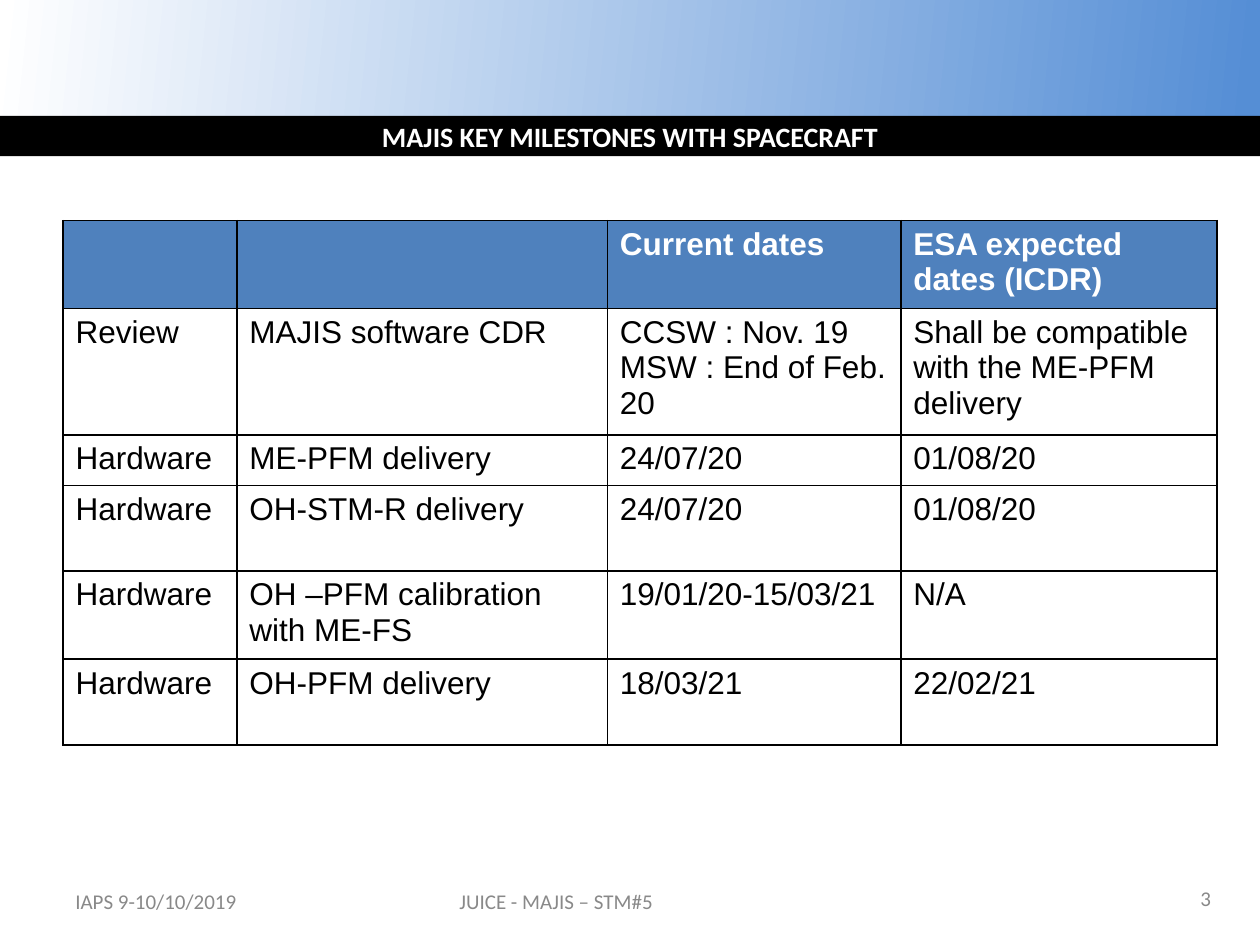
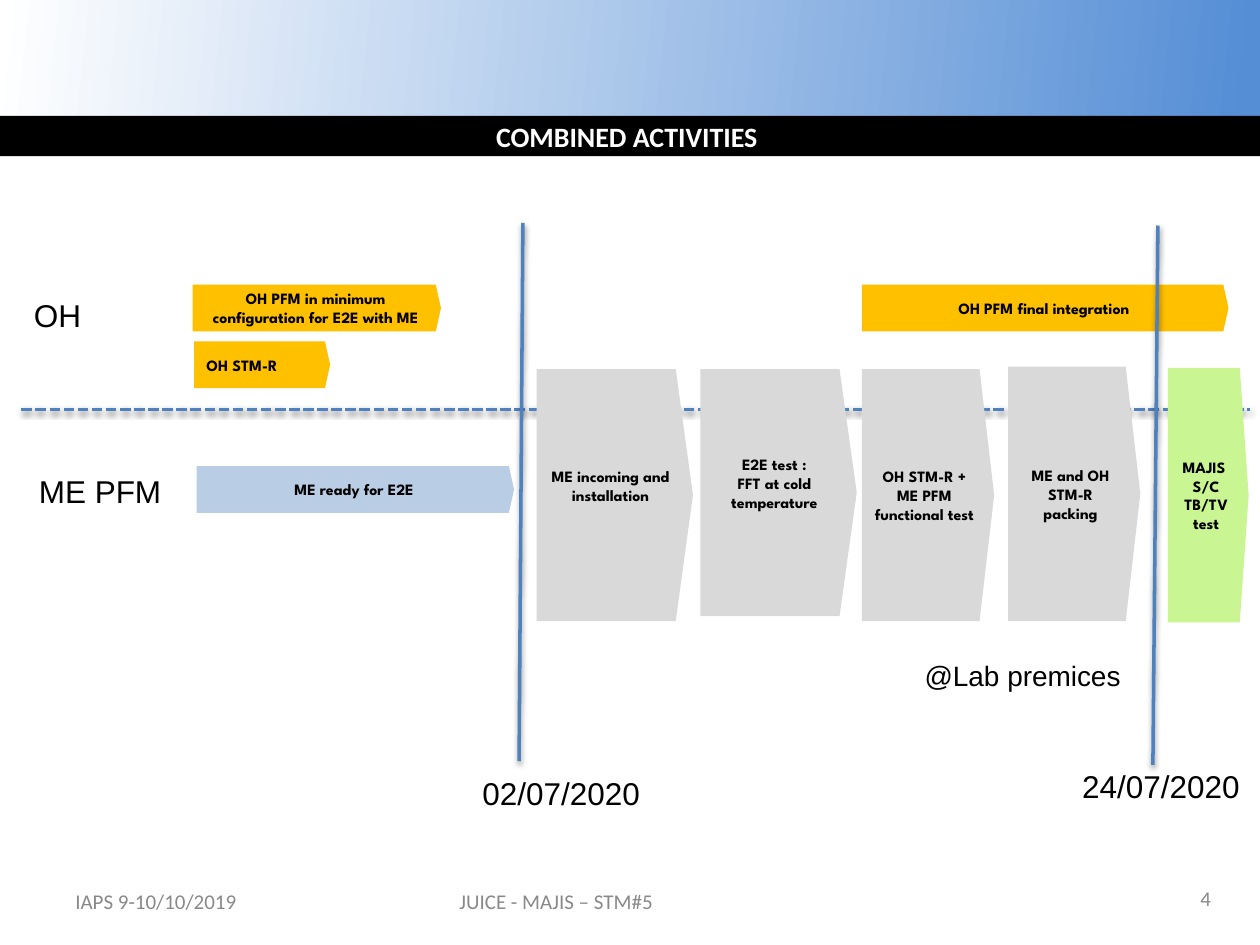
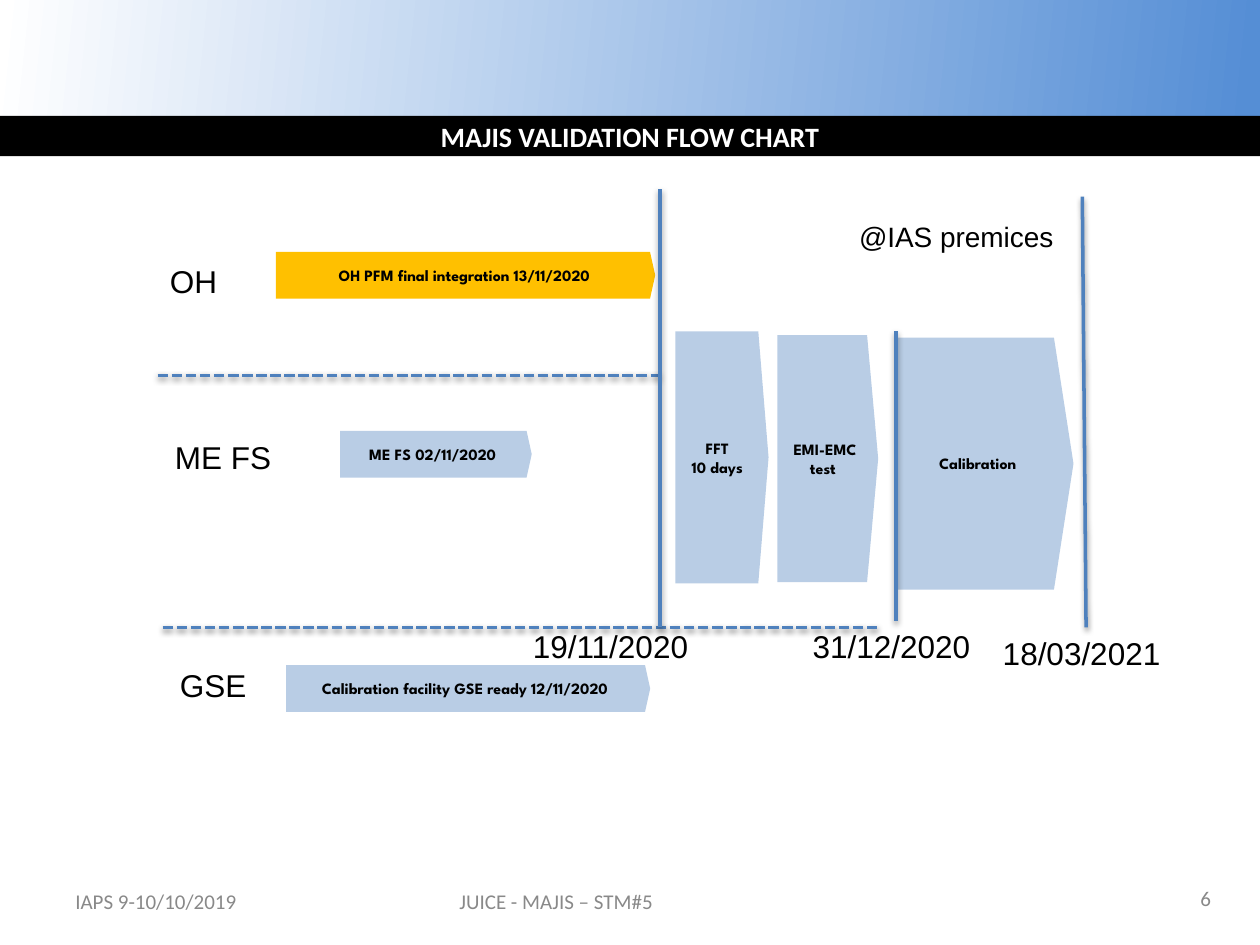
from dataclasses import dataclass

from lxml import etree
from pptx import Presentation
from pptx.dml.color import RGBColor
from pptx.enum.dml import MSO_LINE_DASH_STYLE as Dash
from pptx.enum.shapes import MSO_CONNECTOR as Connector, MSO_SHAPE as Shape
from pptx.enum.text import MSO_ANCHOR as Anchor, MSO_AUTO_SIZE as AutoSize, PP_ALIGN as Align
from pptx.oxml import parse_xml
from pptx.oxml.ns import nsdecls, qn
from pptx.util import Emu, Pt

EMU_PER_PX = 9144  # 100 px to the inch


def px(length):
    return Emu(length * EMU_PER_PX)


@dataclass(frozen=True)
class Box:
    left: int
    top: int
    width: int
    height: int

    def inner(self, left, top, width, height):
        return Box(self.left + left, self.top + top, width, height)

    def emu(self):
        return [px(n) for n in (self.left, self.top, self.width, self.height)]


@dataclass(frozen=True)
class Theme:
    sky: str = "558ED5"
    white: str = "FFFFFF"
    black: str = "000000"
    grey_text: str = "898989"
    blue: str = "4F81BD"
    amber: str = "FFC000"
    pale_blue: str = "B9CDE5"
    grey: str = "D9D9D9"
    green: str = "C9F593"
    heading_font: str = "Calibri"
    body_font: str = "Arial"
    plate_font: str = "League Spartan"
    title_size: int = 16
    footer_size: int = 12
    body_size: int = 18
    place_size: int = 16
    plate_size: int = 9
    line_width: int = 2


THEME = Theme()
TITLE_FONT = dict(name=THEME.heading_font, size=THEME.title_size, color=THEME.white, bold=True)
FOOTER_FONT = dict(name=THEME.heading_font, size=THEME.footer_size, color=THEME.grey_text)
BODY_FONT = dict(name=THEME.body_font, size=THEME.body_size, color=THEME.black, bold=False)
HEADER_FONT = BODY_FONT | dict(color=THEME.white, bold=True)
PLACE_FONT = BODY_FONT | dict(size=THEME.place_size)
PLATE_FONT = dict(name=THEME.plate_font, size=THEME.plate_size, color=THEME.black, bold=True)

PAGE = Box(0, 0, 1000, 750)
BAND = Box(0, 0, 1000, 110)
TITLE = Box(0, 92, 1000, 32)
FOOTERS = [
    (Box(50, 695, 233, 40), "IAPS 9-10/10/2019", Align.LEFT),
    (Box(283, 695, 317, 40), "JUICE - MAJIS – STM#5", Align.CENTER),
]
PAGE_NUMBER = Box(913, 693, 58, 40)

# Milestone table
MILESTONE_BOX = Box(50, 175, 916, 402)
COLUMN_WIDTHS = [138, 294, 233, 251]
ROW_HEIGHTS = [66, 94, 38, 68, 68, 68]
MILESTONES = [
    ("", "", "Current dates", "ESA expected dates (ICDR)"),
    ("Review", "MAJIS software CDR", "CCSW : Nov. 19\nMSW : End of Feb. 20",
     "Shall be compatible with the ME-PFM delivery"),
    ("Hardware", "ME-PFM delivery", "24/07/20", "01/08/20"),
    ("Hardware", "OH-STM-R delivery", "24/07/20", "01/08/20"),
    ("Hardware", "OH –PFM calibration with ME-FS", "19/01/20-15/03/21", "N/A"),
    ("Hardware", "OH-PFM delivery", "18/03/21", "22/02/21"),
]

# Timelines: plates are (left, top, width, height, fill, text, options),
# lines are (x1, y1, x2, y2), labels are (left, top, width, text)
BAR = 37
COMBINED = dict(
    box=Box(17, 177, 983, 467),
    dashed=[(0, 148, 975, 148)],
    plates=[
        (136, 49, 197, BAR, THEME.amber, "OH PFM in minimum configuration for E2E with ME", {}),
        (137, 94, 108, BAR, THEME.amber, "OH STM-R", dict(align=Align.LEFT)),
        (139, 193, 252, BAR, THEME.pale_blue, "ME ready for E2E", {}),
        (667, 49, 291, BAR, THEME.amber, "OH PFM final integration", {}),
        (409, 116, 124, 200, THEME.grey, "ME incoming and installation", dict(raise_by=15)),
        (539, 116, 124, 196, THEME.grey, "E2E test :\nFFT at cold temperature", dict(raise_by=15)),
        (667, 116, 105, 200, THEME.grey, "OH STM-R + ME PFM functional test", {}),
        (783, 114, 105, 202, THEME.grey, "ME and OH STM-R packing", {}),
        (910, 115, 64, 202, THEME.green, "MAJIS \nS/C\nTB/TV test", {}),
    ],
    solid=[(398, 0, 395, 427), (902, 2, 898, 430)],
    labels=[(0, 53, 58, "OH"), (4, 193, 118, "ME PFM"),
            (356, 432, 152, "02/07/2020"), (832, 427, 151, "24/07/2020")],
    place=(707, 341, 186, "@Lab premices"),
)
VALIDATION = dict(
    box=Box(125, 150, 813, 415),
    dashed=[(0, 148, 399, 148), (4, 348, 571, 348)],
    plates=[
        (94, 50, 301, BAR, THEME.amber, "OH PFM final integration 13/11/2020", {}),
        (145, 192, 152, BAR, THEME.pale_blue, "ME FS 02/11/2020 ", {}),
        (102, 378, 289, BAR, THEME.pale_blue, "Calibration facility GSE ready 12/11/2020 ", {}),
        (411, 113, 74, 200, THEME.pale_blue, "FFT \n10 days ", {}),
        (492, 116, 80, 196, THEME.pale_blue, "EMI-EMC test ", {}),
        (586, 118, 141, 200, THEME.pale_blue, "Calibration ", {}),
    ],
    solid=[(399, 0, 399, 348), (586, 113, 586, 343), (734, 6, 737, 348)],
    labels=[(0, 53, 58, "OH"), (4, 193, 97, "ME FS"), (8, 374, 73, "GSE"),
            (288, 343, 152, "19/11/2020"), (510, 343, 152, "31/12/2020"),
            (661, 348, 152, "18/03/2021")],
    place=(547, 19, 176, "@IAS premices"),
)


# Text and shape helpers
def rgb(value):
    return RGBColor.from_string(value)


def write(frame, text, font_format, align=Align.LEFT, **frame_format):
    frame.text = text
    for name, value in frame_format.items():
        setattr(frame, name, value)
    for paragraph in frame.paragraphs:
        paragraph.alignment = align
        font = paragraph.font
        for name, value in font_format.items():
            if name == "color":
                font.color.rgb = rgb(value)
            else:
                setattr(font, name, Pt(value) if name == "size" else value)


def add_text(slide, box, text, font_format, align=Align.LEFT, **frame_format):
    shape = slide.shapes.add_textbox(*box.emu())
    write(shape.text_frame, text, font_format, align, **frame_format)


def add_plain_shape(slide, kind, box):
    shape = slide.shapes.add_shape(kind, *box.emu())
    shape.shadow.inherit = False
    shape.line.fill.background()
    return shape


def add_line(slide, box, ends, dash=None):
    x1, y1, x2, y2 = ends
    points = (box.left + x1, box.top + y1, box.left + x2, box.top + y2)
    line = slide.shapes.add_connector(Connector.STRAIGHT, *map(px, points))
    line.line.color.rgb = rgb(THEME.blue)
    line.line.width = Pt(THEME.line_width)
    if dash:
        line.line.dash_style = dash
    line.element.spPr.append(parse_xml(
        f'<a:effectLst {nsdecls("a")}><a:outerShdw blurRad="40000" dist="20000" dir="5400000"'
        f' rotWithShape="0"><a:srgbClr val="{THEME.black}"><a:alpha val="38000"/></a:srgbClr>'
        '</a:outerShdw></a:effectLst>'))


def add_plate(slide, box, fill, text, align=Align.CENTER, raise_by=0):
    plate = add_plain_shape(slide, Shape.PENTAGON, box)
    plate.adjustments[0] = 0.11
    plate.fill.solid()
    plate.fill.fore_color.rgb = rgb(fill)
    write(plate.text_frame, text, PLATE_FONT, align, word_wrap=True,
          vertical_anchor=Anchor.MIDDLE, margin_bottom=px(5 + raise_by))


# Parts shared by all slides
def add_band_to_layout(slide):
    band = add_plain_shape(slide, Shape.RECTANGLE, BAND)
    band.fill.gradient()
    band.fill.gradient_angle = 174
    for stop, position, color in zip(band.fill.gradient_stops, (0.01, 1), (THEME.sky, THEME.white)):
        stop.position = position
        stop.color.rgb = rgb(color)
    slide.slide_layout.shapes.element.insert(2, band.element)


def add_page(presentation, title_text, number):
    slide = presentation.slides.add_slide(presentation.slide_layouts[5])
    title = slide.shapes.title
    title.left, title.top, title.width, title.height = TITLE.emu()
    title.fill.solid()
    title.fill.fore_color.rgb = rgb(THEME.black)
    write(title.text_frame, title_text, TITLE_FONT, Align.CENTER, word_wrap=False,
          auto_size=AutoSize.NONE, vertical_anchor=Anchor.MIDDLE)
    for box, text, align in FOOTERS + [(PAGE_NUMBER, str(number), Align.RIGHT)]:
        add_text(slide, box, text, FOOTER_FONT, align, word_wrap=True,
                 vertical_anchor=Anchor.MIDDLE)
    return slide


# Table region
def set_borders(cell):
    properties = cell._tc.get_or_add_tcPr()
    for index, side in enumerate(("lnL", "lnR", "lnT", "lnB")):
        border = etree.Element(qn(f"a:{side}"), w=str(Pt(1)))
        fill = etree.SubElement(border, qn("a:solidFill"))
        etree.SubElement(fill, qn("a:srgbClr"), val=THEME.black)
        properties.insert(index, border)


def add_milestone_table(slide, box):
    table = slide.shapes.add_table(len(ROW_HEIGHTS), len(COLUMN_WIDTHS), *box.emu()).table
    table.horz_banding = False
    for column, width in zip(table.columns, COLUMN_WIDTHS):
        column.width = px(width)
    for index, (row, height, texts) in enumerate(zip(table.rows, ROW_HEIGHTS, MILESTONES)):
        row.height = px(height)
        for cell, text in zip(row.cells, texts):
            write(cell.text_frame, text, BODY_FONT if index else HEADER_FONT)
            cell.fill.solid()
            cell.fill.fore_color.rgb = rgb(THEME.white if index else THEME.blue)
            set_borders(cell)


# Timeline region
def add_timeline(slide, box, dashed, plates, solid, labels, place):
    for ends in dashed:
        add_line(slide, box, ends, Dash.SQUARE_DOT)
    for *bounds, fill, text, options in plates:
        add_plate(slide, box.inner(*bounds), fill, text, **options)
    for ends in solid:
        add_line(slide, box, ends)
    for left, top, width, text in labels:
        add_text(slide, box.inner(left, top, width, 40), text, BODY_FONT,
                 word_wrap=False, auto_size=AutoSize.SHAPE_TO_FIT_TEXT)
    left, top, width, text = place
    add_text(slide, box.inner(left, top, width, 37), text, PLACE_FONT,
             word_wrap=False, auto_size=AutoSize.SHAPE_TO_FIT_TEXT)


def main():
    presentation = Presentation()
    presentation.slide_width, presentation.slide_height = px(PAGE.width), px(PAGE.height)

    milestones = add_page(presentation, "MAJIS KEY MILESTONES WITH SPACECRAFT", 3)
    add_band_to_layout(milestones)
    add_milestone_table(milestones, MILESTONE_BOX)

    add_timeline(add_page(presentation, "COMBINED ACTIVITIES ", 4), **COMBINED)
    add_timeline(add_page(presentation, "MAJIS VALIDATION FLOW CHART", 6), **VALIDATION)
    presentation.save("out.pptx")


if __name__ == "__main__":
    main()
